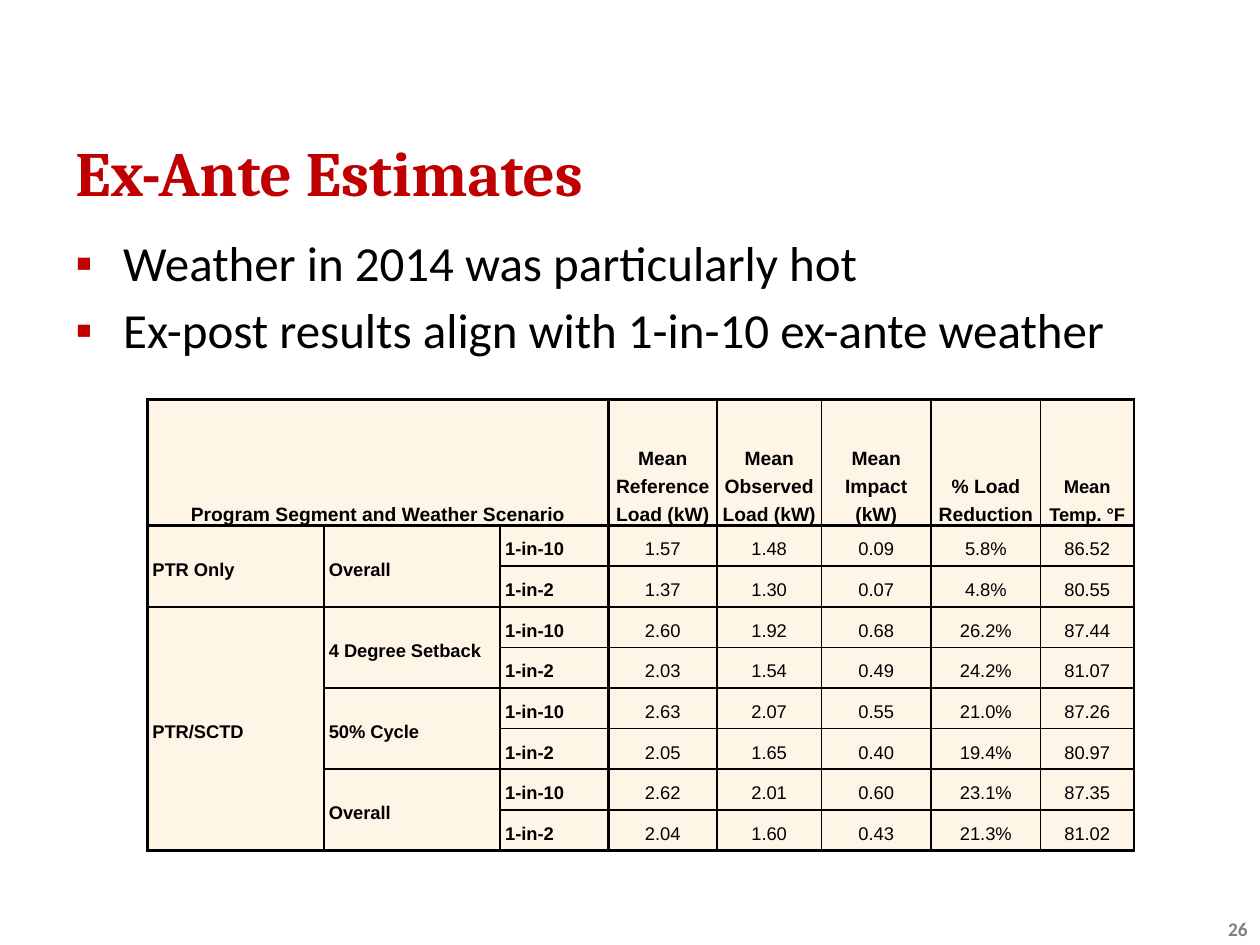
from pptx import Presentation
from pptx.dml.color import RGBColor
from pptx.enum.text import MSO_ANCHOR as Anchor, PP_ALIGN as Align
from pptx.oxml.ns import qn
from pptx.util import Inches, Pt
from lxml.etree import SubElement

COLORS = {"red": "C00000", "black": "000000", "gray": "808080", "cream": "FFF5E7"}

BULLETS = [
    "Weather in 2014 was particularly hot",
    "Ex-post results align with 1-in-10 ex-ante weather",
]

COLUMN_WIDTHS = [1.4, 1.4, 0.86, 0.86, 0.83, 0.87, 0.87, 0.74]
HEADER_HEIGHT = 1
TABLE_HEIGHT = 3.58
HEADERS = [
    "Program Segment and Weather Scenario", "", "",
    "Mean Reference Load (kW)", "Mean Observed Load (kW)", "Mean Impact (kW)",
    "% Load Reduction", "Mean Temp. °F",
]
ROWS = [
    ["PTR Only", "Overall", "1-in-10", "1.57", "1.48", "0.09", "5.8%", "86.52"],
    ["", "", "1-in-2", "1.37", "1.30", "0.07", "4.8%", "80.55"],
    ["PTR/SCTD", "4 Degree Setback", "1-in-10", "2.60", "1.92", "0.68", "26.2%", "87.44"],
    ["", "", "1-in-2", "2.03", "1.54", "0.49", "24.2%", "81.07"],
    ["", "50% Cycle", "1-in-10", "2.63", "2.07", "0.55", "21.0%", "87.26"],
    ["", "", "1-in-2", "2.05", "1.65", "0.40", "19.4%", "80.97"],
    ["", "Overall", "1-in-10", "2.62", "2.01", "0.60", "23.1%", "87.35"],
    ["", "", "1-in-2", "2.04", "1.60", "0.43", "21.3%", "81.02"],
]
MERGES = [
    (0, 0, 0, 2), (1, 0, 2, 0), (3, 0, 8, 0),
    (1, 1, 2, 1), (3, 1, 4, 1), (5, 1, 6, 1), (7, 1, 8, 1),
]
LABEL_COLUMNS = 3
THICK_ROW_LINES = {0, 1, 3, 9}
THICK_COLUMN_LINES = {0, 3, 8}


def rgb(name):
    return RGBColor.from_string(COLORS[name])


def style_font(paragraph, name, size, color, bold=False):
    for run in paragraph.runs:
        run.font.name = name
        run.font.size = Pt(size)
        run.font.bold = bold
        run.font.color.rgb = rgb(color)


def add_text_box(slide, left, top, width, height, anchor):
    shape = slide.shapes.add_textbox(
        Inches(left), Inches(top), Inches(width), Inches(height))
    text_frame = shape.text_frame
    text_frame.word_wrap = True
    text_frame.vertical_anchor = anchor
    return text_frame


def add_line(slide, text, box, font, align=Align.LEFT):
    text_frame = add_text_box(slide, *box, Anchor.MIDDLE)
    text_frame.text = text
    paragraph = text_frame.paragraphs[0]
    paragraph.alignment = align
    style_font(paragraph, *font, bold=True)


def add_bullet(paragraph):
    properties = paragraph._p.get_or_add_pPr()
    properties.set("marL", str(Inches(0.38)))
    properties.set("indent", str(Inches(-0.38)))
    color = SubElement(properties, qn("a:buClr"))
    SubElement(color, qn("a:srgbClr"), val=COLORS["red"])
    SubElement(properties, qn("a:buFont"), typeface="Arial")
    SubElement(properties, qn("a:buChar"), char="▪")


def add_bullet_list(slide, items):
    text_frame = add_text_box(slide, 0.5, 1.8, 9, 1.2, Anchor.TOP)
    text_frame.text = "\n".join(items)
    for index, paragraph in enumerate(text_frame.paragraphs):
        add_bullet(paragraph)
        if index:
            paragraph.space_before = Pt(4.5)
        style_font(paragraph, "Calibri", 28, "black")


def set_borders(cell, row, column):
    bottom = row + (cell.span_height if cell.is_merge_origin else 1)
    right = column + (cell.span_width if cell.is_merge_origin else 1)
    thick_edges = {
        "L": column in THICK_COLUMN_LINES,
        "R": right in THICK_COLUMN_LINES,
        "T": row in THICK_ROW_LINES,
        "B": bottom in THICK_ROW_LINES,
    }
    properties = cell._tc.get_or_add_tcPr()
    for side, thick in thick_edges.items():
        line = SubElement(properties, qn(f"a:ln{side}"), w=str(Pt(1.5 if thick else 1)))
        fill = SubElement(line, qn("a:solidFill"))
        SubElement(fill, qn("a:srgbClr"), val=COLORS["black"])


def fill_cell(cell, text, row, column):
    is_header = row == 0
    is_label = column < LABEL_COLUMNS
    is_last_column = column == len(COLUMN_WIDTHS) - 1
    set_borders(cell, row, column)
    cell.fill.solid()
    cell.fill.fore_color.rgb = rgb("cream")
    cell.margin_left = cell.margin_right = Inches(0.04)
    cell.margin_top = cell.margin_bottom = 0
    cell.vertical_anchor = Anchor.BOTTOM if is_header else Anchor.MIDDLE
    if cell.is_spanned:
        return
    cell.text_frame.text = text
    paragraph = cell.text_frame.paragraphs[0]
    paragraph.alignment = Align.LEFT if is_label and not is_header else Align.CENTER
    paragraph.line_spacing = Pt(16)
    paragraph.space_before = Pt(3)
    paragraph.space_after = Pt(3)
    size = 11 if is_header and not is_last_column else 10.5
    style_font(paragraph, "Arial", size, "black", bold=is_header or is_label)


def add_estimates_table(slide):
    contents = [HEADERS, *ROWS]
    frame = slide.shapes.add_table(
        len(contents), len(COLUMN_WIDTHS), Inches(1.17), Inches(3.17),
        Inches(sum(COLUMN_WIDTHS)), Inches(TABLE_HEIGHT))
    table = frame.table
    table.first_row = table.horz_banding = False
    for column, width in zip(table.columns, COLUMN_WIDTHS):
        column.width = Inches(width)
    for index, row in enumerate(table.rows):
        body_height = (TABLE_HEIGHT - HEADER_HEIGHT) / len(ROWS)
        row.height = Inches(body_height if index else HEADER_HEIGHT)
    for top, left, bottom, right in MERGES:
        table.cell(top, left).merge(table.cell(bottom, right))
    for row, texts in enumerate(contents):
        for column, text in enumerate(texts):
            fill_cell(table.cell(row, column), text, row, column)


def main():
    presentation = Presentation()
    presentation.slide_width = Inches(10)
    presentation.slide_height = Inches(7.5)
    slide = presentation.slides.add_slide(presentation.slide_layouts[6])
    add_bullet_list(slide, BULLETS)
    add_line(slide, "Ex-Ante Estimates", (0.5, 1, 9, 0.72), ("Cambria", 36, "red"))
    add_line(slide, "26", (7.67, 7.17, 2.33, 0.4), ("Calibri", 11, "gray"), Align.RIGHT)
    add_estimates_table(slide)
    presentation.save("out.pptx")


if __name__ == "__main__":
    main()
